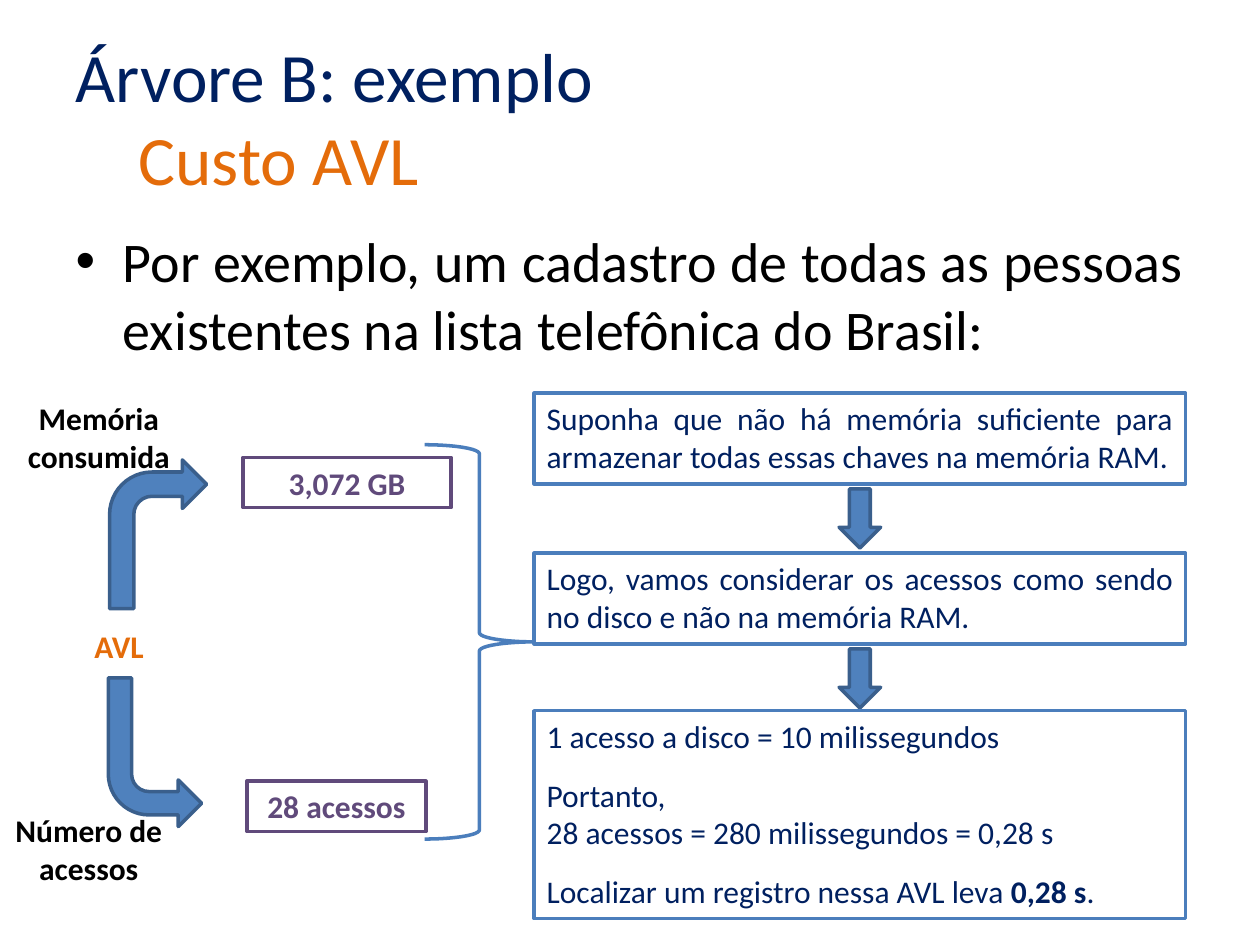
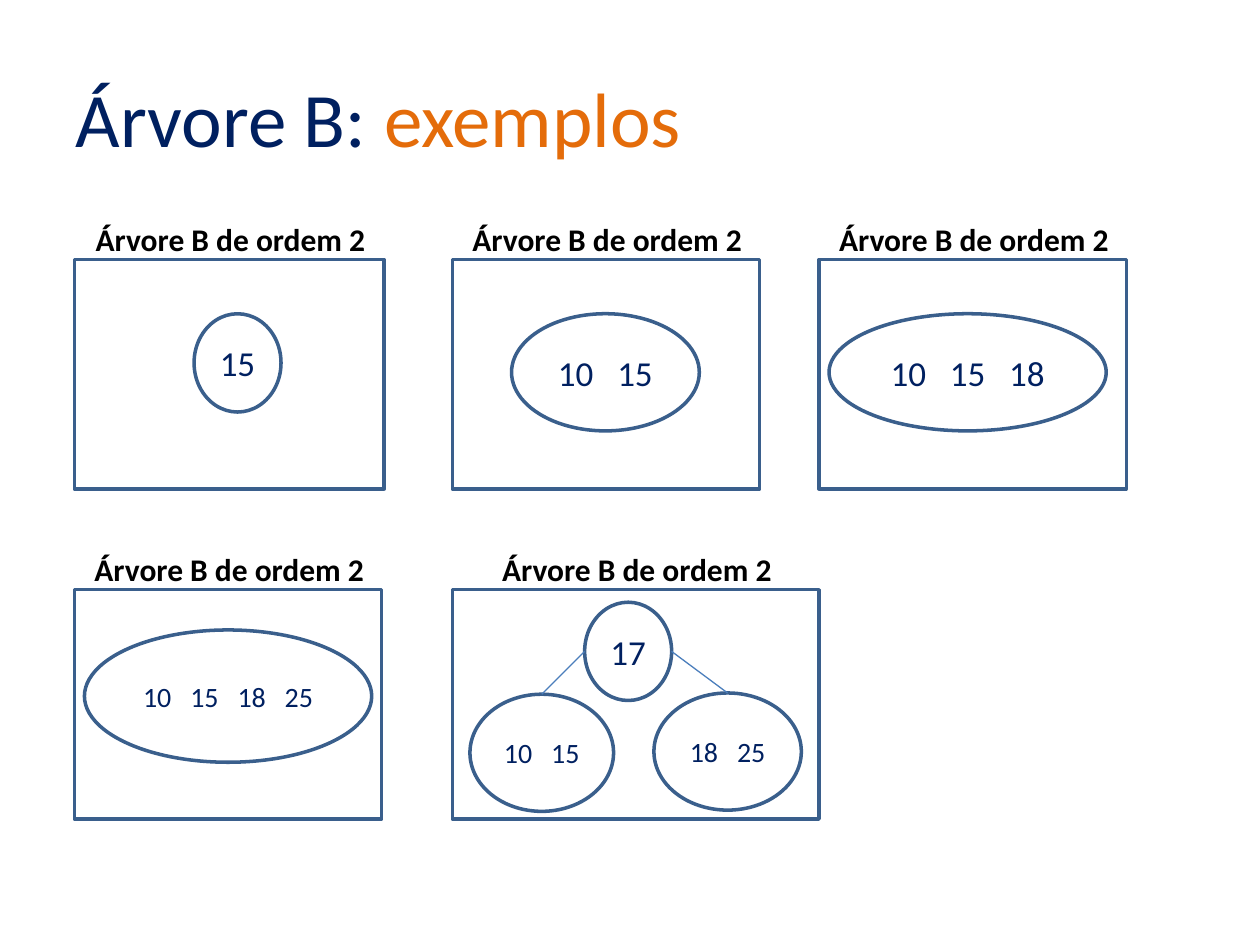
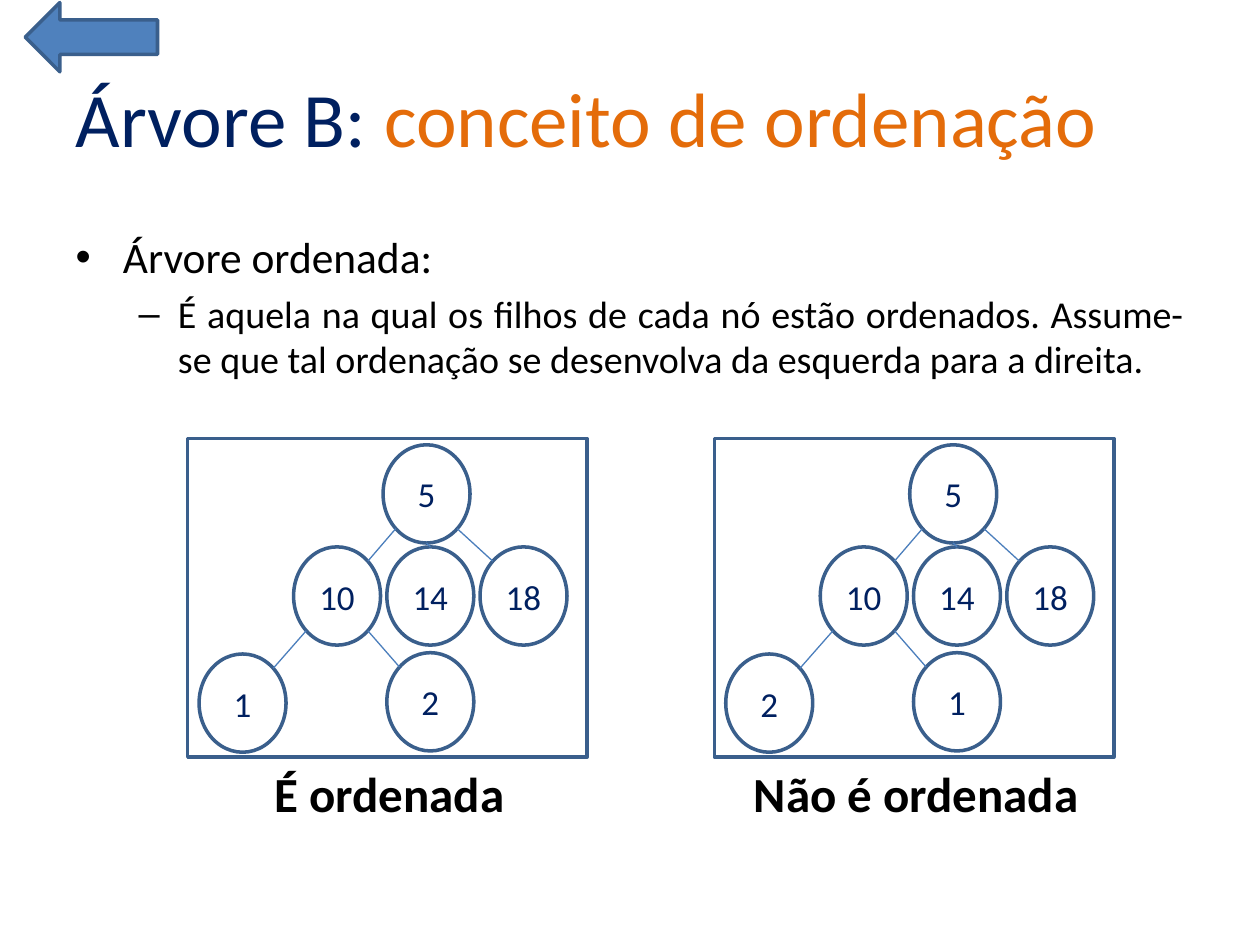
"""Builds three slides on the cost, shape and ordering of B-trees."""
from math import sqrt

from lxml import etree
from pptx import Presentation
from pptx.dml.color import RGBColor
from pptx.enum.shapes import MSO_CONNECTOR, MSO_SHAPE
from pptx.enum.text import MSO_ANCHOR, MSO_AUTO_SIZE, PP_ALIGN
from pptx.oxml.ns import qn
from pptx.util import Inches, Pt

RECTANGLE, OVAL = MSO_SHAPE.RECTANGLE, MSO_SHAPE.OVAL
BENT_ARROW, DOWN_ARROW = MSO_SHAPE.BENT_ARROW, MSO_SHAPE.DOWN_ARROW
LEFT_ARROW, RIGHT_BRACE = MSO_SHAPE.LEFT_ARROW, MSO_SHAPE.RIGHT_BRACE
STRAIGHT = MSO_CONNECTOR.STRAIGHT
LEFT, CENTER, JUSTIFY = PP_ALIGN.LEFT, PP_ALIGN.CENTER, PP_ALIGN.JUSTIFY
TOP, MIDDLE = MSO_ANCHOR.TOP, MSO_ANCHOR.MIDDLE
NO_FIT = MSO_AUTO_SIZE.NONE

FONT = "Calibri"
COLORS = {
    "navy": "002060",
    "orange": "E46C0A",
    "black": "000000",
    "white": "FFFFFF",
    "purple": "604A7B",
    "blue": "4F81BD",
    "outline": "3A5F8C",
    "border": "4B7EBC",
}
TITLE_BOX = (0.5, 0.3, 9, 1.25)
ORANGE = {"color": "orange"}

COST_TITLE = [["Árvore B: exemplo", "\v", ("\tCusto AVL", ORANGE)]]
COST_BODY = ["Por exemplo, um cadastro de todas as pessoas existentes na lista telefônica do Brasil:"]
COST_LABELS = [
    ("AVL", (0.12, 4.93, 1.65, 0.4), "orange"),
    ("Memória consumida", (-0.2, 3.12, 1.97, 0.71), "black"),
    ("Número de acessos", (-0.28, 6.39, 1.97, 0.71), "black"),
]
COST_VALUES = [
    ("3,072 GB", (1.93, 3.63, 1.65, 0.4)),
    ("28 acessos", (1.96, 6.2, 1.42, 0.4)),
]
COST_STEPS = [
    (3.12, 0.72, ["Suponha que não há memória suficiente para armazenar todas essas chaves na memória RAM."]),
    (4.39, 0.72, ["Logo, vamos considerar os acessos como sendo no disco e não na memória RAM."]),
    (5.64, 1.65, [
        "1 acesso a disco = 10 milissegundos",
        "Portanto,",
        "28 acessos = 280 milissegundos = 0,28 s",
        ["Localizar um registro nessa AVL leva ", ("0,28 s", {"bold": True}), "."],
    ]),
]
COST_SPACED = (1, 3)

EXAMPLES_TITLE = [["Árvore B: ", ("exemplos", ORANGE)]]
EXAMPLE_CAPTION = "Árvore B de ordem 2"
EXAMPLES = [
    {"frame": (0.59, 2.06, 2.46), "nodes": [((15,), (1.54, 2.49, 0.69, 0.78), 20)]},
    {"frame": (3.59, 2.06, 2.44), "nodes": [((10, 15), (4.06, 2.49, 1.49, 0.93), 20)]},
    {"frame": (6.5, 2.06, 2.44), "nodes": [((10, 15, 18), (6.58, 2.49, 2.2, 0.93), 20)]},
    {"frame": (0.59, 4.68, 2.44), "nodes": [((10, 15, 18, 25), (0.67, 5, 2.28, 1.05), 16)]},
    {
        "frame": (3.59, 4.68, 2.91),
        "nodes": [
            ((17,), (4.64, 4.78, 0.69, 0.78), 20),
            ((10, 15), (3.73, 5.51, 1.14, 0.93), 16),
            ((18, 25), (5.19, 5.5, 1.17, 0.93), 16),
        ],
        "edges": [(0, (-1, 0), 1, (0, -1)), (0, (1, 0), 2, (0, -1))],
    },
]

ORDER_TITLE = [["Árvore B: ", ("conceito de ordenação", ORANGE)]]
ORDER_BODY = [
    [("Árvore ordenada:", {"size": 24.8})],
    "É aquela na qual os filhos de cada nó estão ordenados. "
    "Assume-se que tal ordenação se desenvolva da esquerda para a direita.",
]
ORDER_TREES = [
    ("É ordenada", 1.49, (5, 10, 14, 18, 1, 2)),
    ("Não é ordenada", 5.67, (5, 10, 14, 18, 2, 1)),
]
TREE_TOP, TREE_WIDTH, TREE_HEIGHT = 3.48, 3.17, 2.53
TREE_PLACES = [(1.55, 0.05), (0.84, 0.86), (1.58, 0.86), (2.32, 0.86), (0.09, 1.71), (1.58, 1.7)]
TREE_EDGES = [
    (0, (-1, 1), 1, (1, -1)),
    (0, (0, 1), 2, (0, -1)),
    (0, (1, 1), 3, (-1, -1)),
    (1, (-1, 1), 4, (1, -1)),
    (1, (1, 1), 5, (-1, -1)),
]


def rgb(name):
    return RGBColor.from_string(COLORS[name])


def inches(values):
    return [Inches(value) for value in values]


def write_text(frame, paragraphs, size=18, color="black", bold=False, align=CENTER,
               anchor=TOP, margin=None, levels=(), spaced=()):
    """Write paragraphs, each a string or a list of strings and (string, format) pairs."""
    frame.word_wrap = True
    frame.auto_size = NO_FIT
    frame.vertical_anchor = anchor
    if margin is not None:
        frame.margin_left = frame.margin_right = Inches(margin)
    for index, pieces in enumerate(paragraphs):
        paragraph = frame.add_paragraph() if index else frame.paragraphs[0]
        paragraph.alignment = align
        if index < len(levels):
            paragraph.level = levels[index]
        if index in spaced:
            paragraph.space_before = Pt(12)
        for piece in [pieces] if isinstance(pieces, str) else pieces:
            text, custom = (piece, {}) if isinstance(piece, str) else piece
            if text == "\v":
                paragraph.add_line_break()
                continue
            run = paragraph.add_run()
            run.text = text
            run.font.name = FONT
            run.font.size = Pt(custom.get("size", size))
            run.font.bold = custom.get("bold", bold)
            run.font.color.rgb = rgb(custom.get("color", color))
            if "tracking" in custom:
                run.font._element.set("spc", str(custom["tracking"]))


def add_label(slide, text, box, **text_format):
    write_text(slide.shapes.add_textbox(*inches(box)).text_frame, [text], bold=True, **text_format)


def add_figure(shapes, kind, box, fill=None, line="outline"):
    shape = shapes.add_shape(kind, *inches(box))
    shape.shadow.inherit = False
    if fill:
        shape.fill.solid()
        shape.fill.fore_color.rgb = rgb(fill)
    else:
        shape.fill.background()
    shape.line.color.rgb = rgb(line)
    shape.line.width = Pt(2)
    return shape


def add_node(shapes, keys, box, size=20):
    pieces = [str(keys[0])]
    for key in keys[1:]:
        pieces += [(" ", {"tracking": 45 * size}), str(key)]
    shape = add_figure(shapes, OVAL, box)
    write_text(shape.text_frame, [pieces], size=size, color="navy", anchor=MIDDLE, margin=0)


def rim_point(box, direction):
    left, top, width, height = box
    across, down = direction
    reach = 0.5 / sqrt(across ** 2 + down ** 2)
    return left + width * (0.5 + across * reach), top + height * (0.5 + down * reach)


def add_edges(shapes, boxes, edges):
    for parent, leaving, child, entering in edges:
        ends = rim_point(boxes[parent], leaving) + rim_point(boxes[child], entering)
        connector = shapes.add_connector(STRAIGHT, *inches(ends))
        connector.line.color.rgb = rgb("border")
        connector.line.width = Pt(0.75)
        etree.SubElement(connector._element.spPr, qn("a:effectLst"))


def place(placeholder, box):
    placeholder.left, placeholder.top, placeholder.width, placeholder.height = inches(box)
    return placeholder.text_frame


def start_slide(presentation, layout, title, size=44):
    slide = presentation.slides.add_slide(presentation.slide_layouts.get_by_name(layout))
    write_text(place(slide.shapes.title, TITLE_BOX), title, size=size, color="navy",
               align=LEFT, anchor=MIDDLE)
    return slide


def build_cost(presentation):
    slide = start_slide(presentation, "Title and Content", COST_TITLE, size=39.6)
    write_text(place(slide.placeholders[1], (0.5, 1.75, 9, 1.21)), COST_BODY, size=32, align=JUSTIFY)
    shapes = slide.shapes
    add_figure(shapes, BENT_ARROW, (0.87, 3.65, 0.77, 1.18), fill="blue")
    lower_arrow = add_figure(shapes, BENT_ARROW, (0.86, 5.38, 0.74, 1.18), fill="blue")
    lower_arrow.rotation = 180
    lower_arrow._element.spPr.xfrm.set("flipH", "1")
    for text, box, color in COST_LABELS:
        add_label(slide, text, box, color=color)
    for text, box in COST_VALUES:
        value = add_figure(shapes, RECTANGLE, box, fill="white", line="purple")
        write_text(value.text_frame, [text], color="purple", bold=True)
    add_figure(shapes, RIGHT_BRACE, (3.37, 3.53, 0.87, 3.13), line="border")
    for index, (top, height, lines) in enumerate(COST_STEPS):
        step = add_figure(shapes, RECTANGLE, (4.24, top, 5.17, height), line="border")
        write_text(step.text_frame, lines, color="navy", align=JUSTIFY, spaced=COST_SPACED)
        if index < len(COST_STEPS) - 1:
            add_figure(shapes, DOWN_ARROW, (6.66, top + height + 0.04, 0.33, 0.47), fill="blue")


def build_examples(presentation):
    slide = start_slide(presentation, "Title Only", EXAMPLES_TITLE)
    for example in EXAMPLES:
        left, top, width = example["frame"]
        add_figure(slide.shapes, RECTANGLE, (left, top, width, 1.82))
        add_label(slide, EXAMPLE_CAPTION, (left + 0.01, top - 0.36, width, 0.4))
        for keys, box, size in example["nodes"]:
            add_node(slide.shapes, keys, box, size)
        boxes = [box for _, box, _ in example["nodes"]]
        add_edges(slide.shapes, boxes, example.get("edges", []))


def build_ordering(presentation):
    slide = start_slide(presentation, "Title and Content", ORDER_TITLE)
    write_text(place(slide.placeholders[1], (0.5, 1.78, 9, 1.34)), ORDER_BODY, size=21.7,
               align=JUSTIFY, levels=(0, 1))
    for caption, left, keys in ORDER_TREES:
        add_label(slide, caption, (left, TREE_TOP + TREE_HEIGHT, 3.2, 0.57), size=28)
        shapes = slide.shapes.add_group_shape().shapes
        add_figure(shapes, RECTANGLE, (left, TREE_TOP, TREE_WIDTH, TREE_HEIGHT))
        boxes = [(left + across, TREE_TOP + down, 0.69, 0.78) for across, down in TREE_PLACES]
        for key, box in zip(keys, boxes):
            add_node(shapes, [key], box)
        add_edges(shapes, boxes, TREE_EDGES)
    add_figure(slide.shapes, LEFT_ARROW, (0.2, 0.02, 1.05, 0.55), fill="blue")


def main():
    presentation = Presentation()
    presentation.slide_width, presentation.slide_height = Inches(10), Inches(7.5)
    build_cost(presentation)
    build_examples(presentation)
    build_ordering(presentation)
    presentation.save("out.pptx")


if __name__ == "__main__":
    main()
